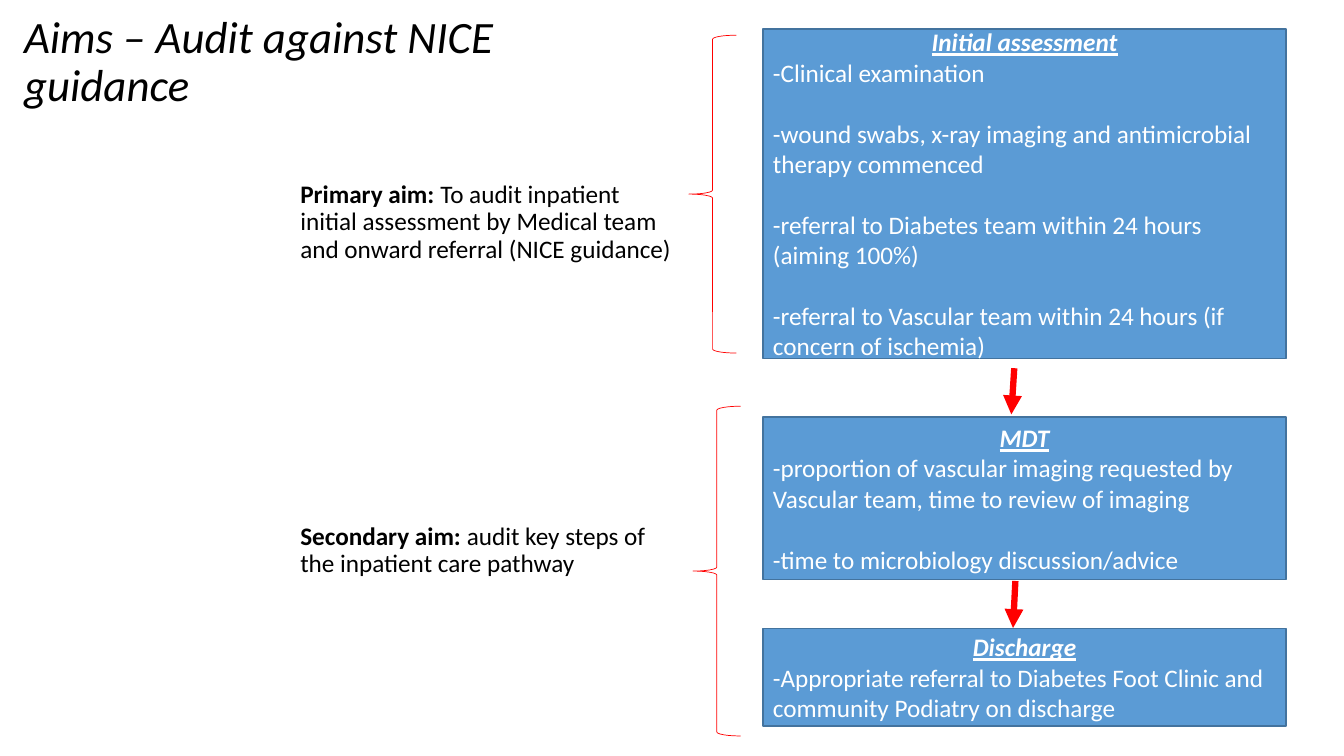
from lxml import etree
from pptx import Presentation
from pptx.dml.color import RGBColor
from pptx.enum.shapes import MSO_CONNECTOR, MSO_SHAPE
from pptx.enum.text import MSO_ANCHOR, MSO_AUTO_SIZE, PP_ALIGN
from pptx.oxml.ns import qn
from pptx.util import Pt

RECT, BRACE = MSO_SHAPE.RECTANGLE, MSO_SHAPE.LEFT_BRACE
LINE = MSO_CONNECTOR.STRAIGHT
MID, NO_FIT = MSO_ANCHOR.MIDDLE, MSO_AUTO_SIZE.NONE
LEFT, CENTER = PP_ALIGN.LEFT, PP_ALIGN.CENTER
HEX = {"text": "000000", "light": "FFFFFF", "box": "5B9BD5",
       "edge": "43739E", "mark": "FF0000"}
COLOR = {name: RGBColor.from_string(code) for name, code in HEX.items()}


def style(para, size, color):
    para.font.name = "Calibri"
    para.font.size = Pt(size)
    para.font.color.rgb = COLOR[color]


def outline(item, color, width):
    item.line.color.rgb = COLOR[color]
    item.line.width = Pt(width)


deck = Presentation()
deck.slide_width, deck.slide_height = Pt(960), Pt(540)
slide = deck.slides.add_slide(deck.slide_layouts[5])
shapes = slide.shapes

# Title
title = shapes.title
title.left, title.top, title.width, title.height = Pt(10), Pt(-7), Pt(457), Pt(104)
frame = title.text_frame
frame.text = "Aims – Audit against NICE guidance"
frame.word_wrap, frame.auto_size = True, NO_FIT
frame.vertical_anchor = MID
para = frame.paragraphs[0]
para.alignment, para.line_spacing = LEFT, 0.9
style(para, 32, "text")
para.font.italic = True

# Aims: text top, label, wording, then brace left, top and height
aims = [
    (126.3, "Primary aim: ", "To audit inpatient initial assessment by Medical "
     "team and onward referral (NICE guidance)", 492, 25.2, 227),
    (370.3, "Secondary aim: ", "audit key steps of the inpatient care pathway",
     495, 290.2, 235.5),
]
for top, label, words, left, start, tall in aims:
    note = shapes.add_textbox(Pt(207.4), Pt(top), Pt(284.4), Pt(68))
    note.text_frame.word_wrap = True
    para = note.text_frame.paragraphs[0]
    para.line_spacing = 0.9
    style(para, 18, "text")
    run = para.add_run()
    run.text, run.font.bold = label, True
    para.add_run().text = words

    brace = shapes.add_shape(BRACE, Pt(left), Pt(start), Pt(34), Pt(tall))
    brace.shadow.inherit = False
    brace.fill.background()
    outline(brace, "mark", 0.5)

# Pathway boxes: top, height, heading, steps
stages = [
    (20.6, 235.6, "Initial assessment", [
        "-Clinical examination",
        "-wound swabs, x-ray imaging and antimicrobial therapy commenced",
        "-referral to Diabetes team within 24 hours (aiming 100%)",
        "-referral to Vascular team within 24 hours (if concern of ischemia)"]),
    (298, 116, "MDT", [
        "-proportion of vascular imaging requested by Vascular team, "
        "time to review of imaging",
        "-time to microbiology discussion/advice"]),
    (448.8, 69.8, "Discharge", [
        "-Appropriate referral to Diabetes Foot Clinic and community "
        "Podiatry on discharge"]),
]
for top, tall, head, steps in stages:
    box = shapes.add_shape(RECT, Pt(545), Pt(top), Pt(373.7), Pt(tall))
    box.shadow.inherit = False
    box.fill.solid()
    box.fill.fore_color.rgb = COLOR["box"]
    outline(box, "edge", 1)
    frame = box.text_frame
    frame.word_wrap, frame.vertical_anchor = True, MID
    para = frame.paragraphs[0]
    para.text, para.alignment = head, CENTER
    style(para, 18, "light")
    para.font.bold = para.font.italic = para.font.underline = True
    for i, step in enumerate(steps):
        para = frame.add_paragraph()
        para.text, para.alignment = step, LEFT
        para.space_before = Pt(22 if i else 0)
        style(para, 18, "light")

# Arrows between boxes
for x1, y1, x2, y2 in [(724.5, 263, 722.4, 296), (725.3, 415, 723.6, 448.6)]:
    arrow = shapes.add_connector(LINE, Pt(x1), Pt(y1), Pt(x2), Pt(y2))
    outline(arrow, "mark", 4.5)
    line = arrow.line._get_or_add_ln()
    etree.SubElement(line, qn("a:tailEnd"), type="triangle")
    etree.SubElement(arrow._element.spPr, qn("a:effectLst"))

deck.save("out.pptx")
